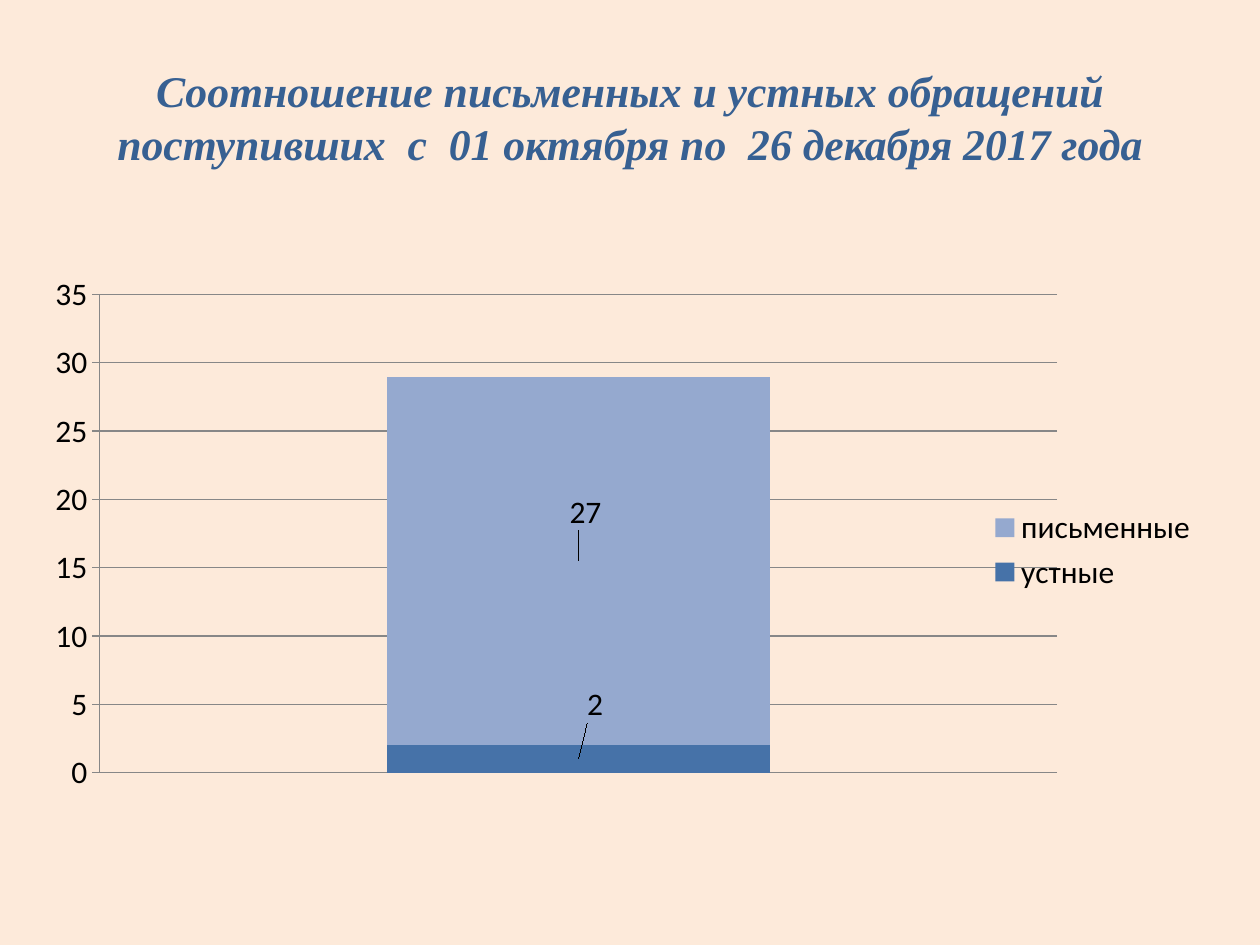
import pptx
import pptx.chart.data
import pptx.dml.color
import pptx.enum.chart
import pptx.enum.text
import pptx.oxml
import pptx.oxml.ns
import pptx.util
from pptx.util import Pt

COLORS = {
    "background": "FDEADA",
    "title": "376092",
    "text": "000000",
    "axis": "878787",
    "oral": "4672A8",
    "written": "95A9CF",
}
# name, value, colour, label shift as fractions of the chart's width and height
APPEALS = [
    ("устные", 2, "oral", (0.014, -0.1)),
    ("письменные", 27, "written", (0.006, -0.09)),
]
PLOT_AREA = {"x": 0.06, "y": 0.03, "w": 0.81, "h": 0.88}


def rgb(key):
    return pptx.dml.color.RGBColor.from_string(COLORS[key])


def set_font(font, color, **values):
    for attribute, value in values.items():
        setattr(font, attribute, value)
    font.color.rgb = rgb(color)


def manual_layout(modes, fractions):
    parts = [*modes.items(), *fractions.items()]
    children = "".join(f'<c:{tag} val="{value}"/>' for tag, value in parts)
    return pptx.oxml.parse_xml(
        f'<c:layout {pptx.oxml.ns.nsdecls("c")}>'
        f"<c:manualLayout>{children}</c:manualLayout></c:layout>"
    )


def add_title(slide, left, top, width, height):
    frame = slide.shapes.add_textbox(left, top, width, height).text_frame
    frame.word_wrap = True
    frame.vertical_anchor = pptx.enum.text.MSO_ANCHOR.MIDDLE
    heading = frame.paragraphs[0]
    heading.alignment = pptx.enum.text.PP_ALIGN.CENTER
    run = heading.add_run()
    run.text = (
        "Соотношение письменных и устных обращений "
        "поступивших  с  01 октября по  26 декабря 2017 года"
    )
    set_font(run.font, "title", name="Times New Roman", size=Pt(25), bold=True, italic=True)


def style_axes(chart):
    chart.category_axis.visible = False
    axis = chart.value_axis
    settings = {
        "minimum_scale": 0,
        "maximum_scale": 35,
        "major_unit": 5,
        "has_major_gridlines": True,
        "major_tick_mark": pptx.enum.chart.XL_TICK_MARK.OUTSIDE,
    }
    for attribute, value in settings.items():
        setattr(axis, attribute, value)
    for line in (axis.format.line, axis.major_gridlines.format.line):
        line.color.rgb = rgb("axis")
        line.width = Pt(0.75)


def style_series(series, color, shift):
    series.format.fill.solid()
    series.format.fill.fore_color.rgb = rgb(color)
    series.data_labels.show_value = True
    series.points[0].data_label.position = pptx.enum.chart.XL_LABEL_POSITION.CENTER
    label_index = series.data_labels._element.xpath("c:dLbl/c:idx")[0]
    label_index.addnext(manual_layout({}, dict(zip("xy", shift))))


def add_appeals_chart(slide, left, top, width, height):
    data = pptx.chart.data.CategoryChartData()
    data.categories = ["1"]
    for name, value, *_ in APPEALS:
        data.add_series(name, [value])
    kind = pptx.enum.chart.XL_CHART_TYPE.COLUMN_STACKED
    chart = slide.shapes.add_chart(kind, left, top, width, height, data).chart
    chart.has_title = False
    set_font(chart.font, "text", name="Calibri", size=Pt(18))
    chart.has_legend = True
    chart.legend.position = pptx.enum.chart.XL_LEGEND_POSITION.RIGHT
    chart.legend.include_in_layout = False

    plot = chart.plots[0]
    for attribute, value in {"gap_width": 150, "overlap": 100, "vary_by_categories": False}.items():
        setattr(plot, attribute, value)
    for series, (_, _, color, shift) in zip(plot.series, APPEALS):
        style_series(series, color, shift)
    style_axes(chart)

    plot_area = chart._chartSpace.xpath("c:chart/c:plotArea")[0]
    for automatic in plot_area.xpath("c:layout"):
        plot_area.remove(automatic)
    modes = {"layoutTarget": "inner", "xMode": "edge", "yMode": "edge"}
    plot_area.insert(0, manual_layout(modes, PLOT_AREA))


def main():
    deck = pptx.Presentation()
    deck.slide_width, deck.slide_height = Pt(720), Pt(540)
    slide = deck.slides.add_slide(deck.slide_layouts[6])
    slide.background.fill.solid()
    slide.background.fill.fore_color.rgb = rgb("background")
    add_title(slide, Pt(36), Pt(21.6), Pt(648), Pt(90))
    add_appeals_chart(slide, Pt(16.5), Pt(157.5), Pt(675.5), Pt(312))
    deck.save("out.pptx")


if __name__ == "__main__":
    main()
